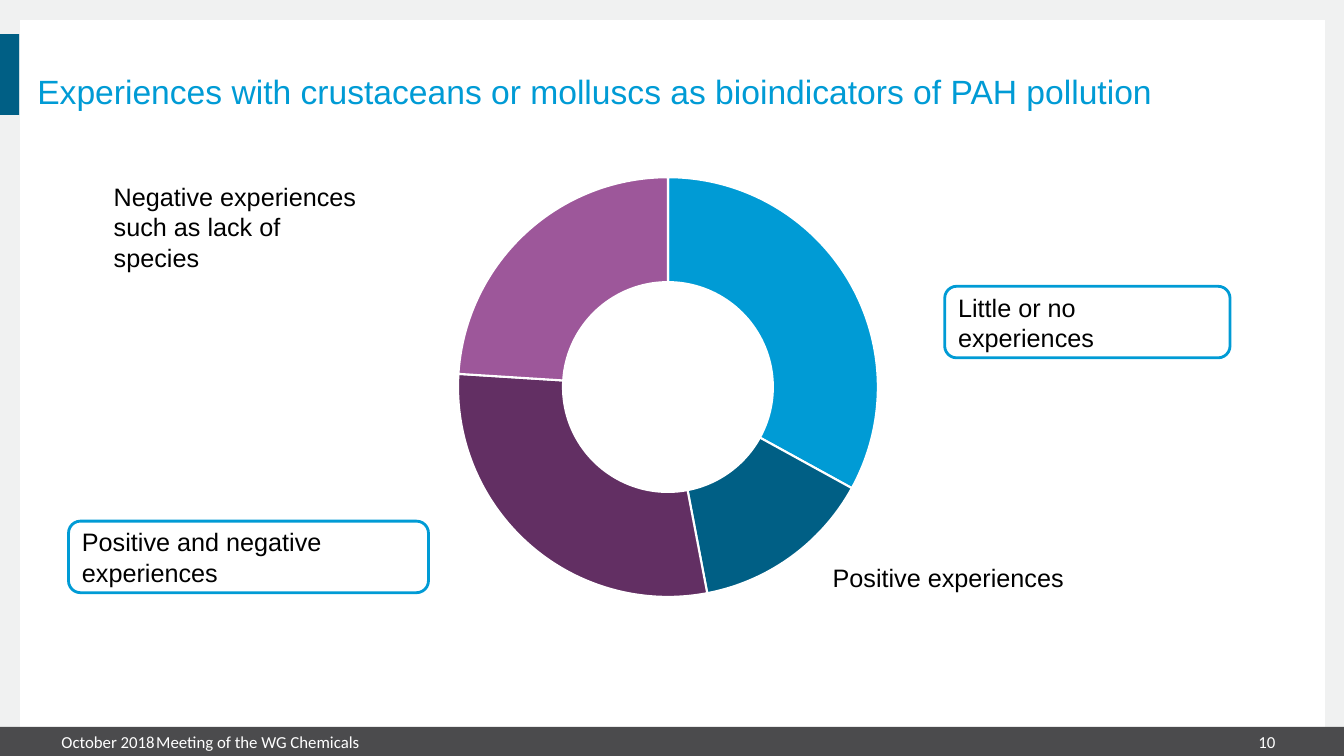
import dataclasses

import pptx
import pptx.chart.data
import pptx.dml.color
import pptx.enum.chart
import pptx.enum.shapes
import pptx.enum.text
import pptx.util

PX = 9144  # EMU per px, 100 px to the inch
SHAPE = pptx.enum.shapes.MSO_SHAPE
ANCHOR = pptx.enum.text.MSO_ANCHOR
ALIGN = pptx.enum.text.PP_ALIGN


@dataclasses.dataclass(frozen=True)
class Theme:
    frame: str = "F0F1F1"
    white: str = "FFFFFF"
    black: str = "000000"
    footer: str = "4B4B4D"
    blue: str = "009BD5"
    navy: str = "005F85"
    plum: str = "622F63"
    mauve: str = "9D579A"
    font: str = "Arial"
    footer_font: str = "Calibri"
    chart_font: str = "Cambria"
    title_size: int = 24
    label_size: int = 18
    footer_size: int = 12
    chart_size: int = 10


THEME = Theme()


def rgb(color):
    return pptx.dml.color.RGBColor.from_string(color)


def px(*lengths):
    return [pptx.util.Emu(n * PX) for n in lengths]


def paint(fill, color):
    fill.solid()
    fill.fore_color.rgb = rgb(color)


def style_font(font, name, size, color):
    font.name = name
    font.size = pptx.util.Pt(size)
    font.color.rgb = rgb(color)


def write(tf, lines, name, size, color, align=ALIGN.LEFT):
    for i, line in enumerate(lines):
        p = tf.add_paragraph() if i else tf.paragraphs[0]
        p.alignment = align
        r = p.add_run()
        r.text = line
        style_font(r.font, name, size, color)


def clear_margins(tf):
    tf.margin_left = tf.margin_top = tf.margin_right = tf.margin_bottom = 0


def add_block(s, box, color):
    sp = s.shapes.add_shape(SHAPE.RECTANGLE, *px(*box))
    sp.shadow.inherit = False
    paint(sp.fill, color)
    sp.line.fill.background()


def add_title(s, box, text):
    sp = s.shapes.title
    sp.left, sp.top, sp.width, sp.height = px(*box)
    tf = sp.text_frame
    clear_margins(tf)
    tf.word_wrap = True
    tf.vertical_anchor = ANCHOR.BOTTOM
    write(tf, [text], THEME.font, THEME.title_size, THEME.blue)
    tf.paragraphs[0].line_spacing = pptx.util.Pt(22)
    # Bring the title in front of the white panel.
    sp.element.getparent().append(sp.element)


def add_footer(s, left, width, text, align=ALIGN.LEFT):
    tf = s.shapes.add_textbox(*px(left, 721, width, 29)).text_frame
    clear_margins(tf)
    tf.word_wrap = True
    tf.vertical_anchor = ANCHOR.MIDDLE
    write(tf, [text], THEME.footer_font, THEME.footer_size, THEME.white, align)


def add_label(s, box, lines):
    tf = s.shapes.add_textbox(*px(*box)).text_frame
    tf.word_wrap = False
    write(tf, lines, THEME.font, THEME.label_size, THEME.black)


def add_framed_label(s, box, lines):
    sp = s.shapes.add_shape(SHAPE.ROUNDED_RECTANGLE, *px(*box))
    sp.shadow.inherit = False
    sp.fill.background()
    sp.line.color.rgb = rgb(THEME.blue)
    sp.line.width = pptx.util.Pt(2)
    tf = sp.text_frame
    tf.word_wrap = True
    tf.vertical_anchor = ANCHOR.MIDDLE
    write(tf, lines, THEME.font, THEME.label_size, THEME.black)


def add_doughnut(s, box, values, colors):
    data = pptx.chart.data.CategoryChartData()
    data.categories = [str(i + 1) for i in range(len(values))]
    data.add_series("Series 1", values)
    kind = pptx.enum.chart.XL_CHART_TYPE.DOUGHNUT
    chart = s.shapes.add_chart(kind, *px(*box), data).chart
    chart.has_legend = False
    chart.has_title = False
    style_font(chart.font, THEME.chart_font, THEME.chart_size, THEME.black)
    plot = chart.plots[0]
    plot.vary_by_categories = True
    for i, color in enumerate(colors):
        fmt = plot.series[0].points[i].format
        paint(fmt.fill, color)
        fmt.line.color.rgb = rgb(THEME.white)
        fmt.line.width = pptx.util.Pt(1.5)


def main():
    prs = pptx.Presentation()
    prs.slide_width, prs.slide_height = px(1333, 750)
    s = prs.slides.add_slide(prs.slide_layouts[5])

    paint(s.background.fill, THEME.frame)
    add_block(s, (20, 20, 1294, 718), THEME.white)
    add_block(s, (0, 721, 1333, 29), THEME.footer)
    add_block(s, (0, 34, 19, 80), THEME.navy)

    add_doughnut(s, (239, 162, 847, 444), (33, 14, 29, 24),
                 (THEME.blue, THEME.navy, THEME.plum, THEME.mauve))
    add_title(s, (37, 44, 1200, 66),
              "Experiences with crustaceans or molluscs as bioindicators of PAH pollution")

    add_footer(s, 61, 94, "October 2018")
    add_footer(s, 155, 980, "Meeting of the WG Chemicals")
    add_footer(s, 1184, 81, "10", ALIGN.RIGHT)

    add_label(s, (103, 175, 273, 110), ["Negative experiences", "such as lack of species"])
    add_label(s, (816, 553, 346, 47), ["Positive experiences"])
    add_framed_label(s, (68, 517, 357, 71), ["Positive and negative", "experiences"])
    add_framed_label(s, (937, 284, 283, 71), ["Little or no experiences"])

    prs.save("out.pptx")


if __name__ == "__main__":
    main()
